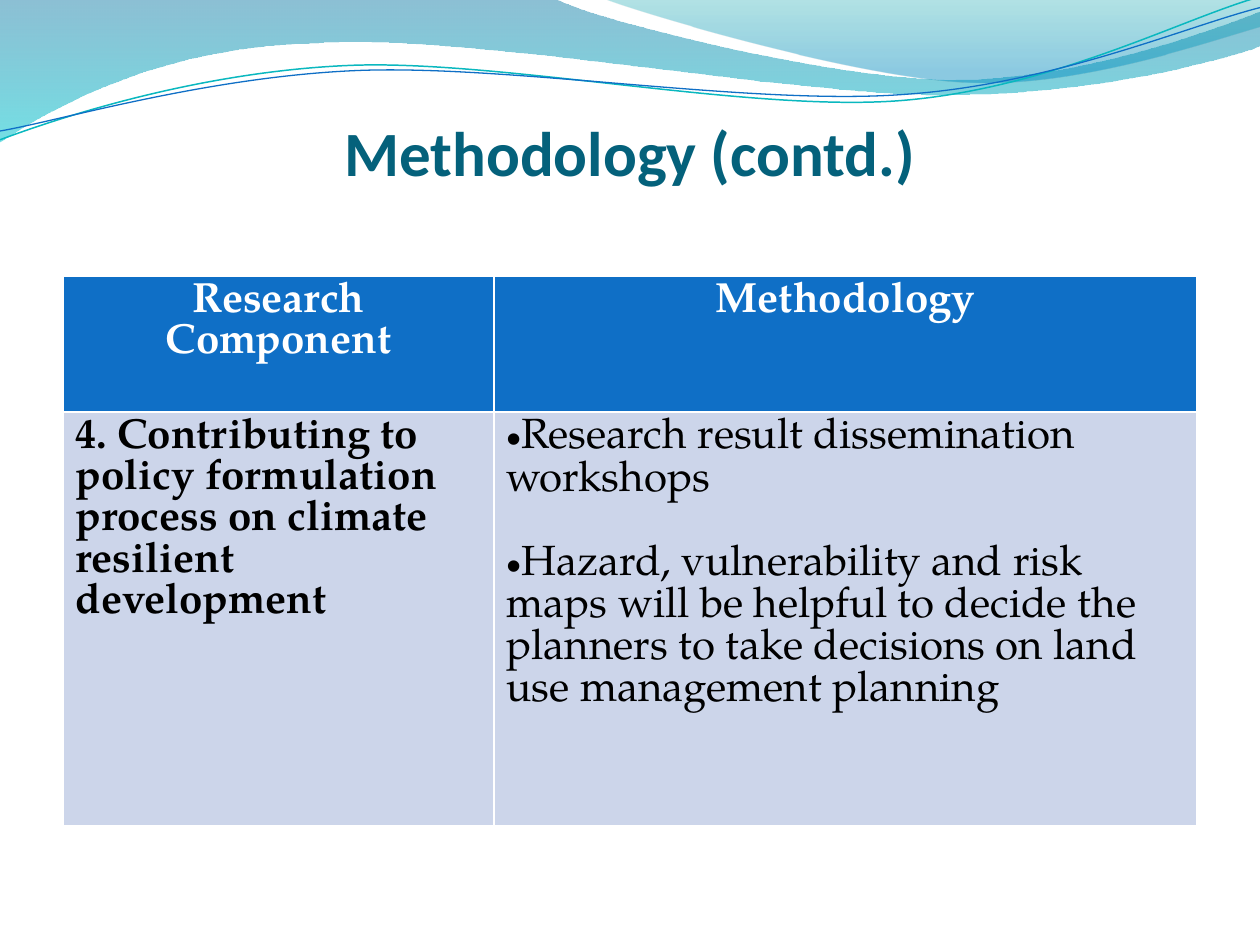
from math import cos, radians, sin

from lxml.etree import SubElement
from pptx import Presentation
from pptx.dml.color import RGBColor
from pptx.enum.text import MSO_ANCHOR, MSO_AUTO_SIZE, PP_ALIGN
from pptx.oxml.ns import qn
from pptx.util import Inches, Pt

COLORS = {
    "title": "04617B", "header": "0F6FC6", "body": "CCD5EA", "white": "FFFFFF", "black": "000000",
    "teal": "0AB8BF", "wave_top": "0074A1", "wave_bottom": "00C6CF",
    "crest_top": "00A1A9", "crest_bottom": "008BBF",
}
WAVE = [
    (0, 0), (4.4, -0.01),
    (4.76, 0.17, 6.64, 0.63, 7.58, 0.63), (8.53, 0.63, 9.58, 0.26, 10, 0.09), (10.01, 0.36),
    (9.83, 0.44, 8.7, 0.76, 7.46, 0.75), (6.22, 0.75, 3.82, 0.28, 2.57, 0.34),
    (1.29, 0.36, 0.46, 0.83, -0.01, 1.13), (0, 0),
]
CREST = [
    (4.79, -0.01), (5.09, 0.11, 6.82, 0.62, 7.69, 0.65),
    (8.56, 0.69, 9.61, 0.32, 10, 0.21), (10, 0), (4.79, -0.01),
]
TEAL_LINE = [
    (0, 1.11), (0.48, 0.93, 1.58, 0.57, 2.77, 0.52),
    (3.95, 0.47, 5.93, 0.89, 7.13, 0.8), (8.33, 0.71, 9.38, 0.15, 9.98, -0.02),
]
BLUE_LINE = [
    (0, 1.04), (0.47, 0.96, 1.64, 0.61, 2.83, 0.56),
    (4.03, 0.51, 5.97, 0.84, 7.17, 0.75), (8.36, 0.67, 9.41, 0.21, 10, 0.06),
]
ROWS = [
    [["Research Component"], ["Methodology"]],
    [["4. Contributing to policy formulation process on climate resilient development"],
     ["Research result dissemination workshops",
      "Hazard, vulnerability and risk maps will be helpful to decide the planners "
      "to take decisions on land use management planning"]],
]


def color(name):
    """Return the named colour."""
    return RGBColor.from_string(COLORS[name])


def local_point(x, y, box, rotation):
    """Express a slide point in the unrotated frame of a box."""
    left, top, width, height = box
    angle = radians(-rotation)
    across, down = x - left - width / 2, y - top - height / 2
    return (Inches(across * cos(angle) - down * sin(angle) + width / 2),
            Inches(across * sin(angle) + down * cos(angle) + height / 2))


class SlideBuilder:
    """Hold the style and the current slide."""

    title_font = "Calibri"
    table_font = "TeX Gyre Pagella"

    def __init__(self, slide):
        self.slide = slide

    def place(self, shape, box):
        """Set the position and size of a shape."""
        shape.left, shape.top, shape.width, shape.height = map(Inches, box)

    def curve(self, box, segments, rotation=0, close=False):
        """Add an outline of straight lines and cubic curves."""
        ends = [(Inches(segment[-2]), Inches(segment[-1])) for segment in segments]
        builder = self.slide.shapes.build_freeform(*ends[0])
        builder.add_line_segments(ends[1:], close=close)
        shape = builder.convert_to_shape()
        shape.shadow.inherit = False
        self.place(shape, box)
        shape.rotation = rotation
        outline = next(shape._element.iter(qn("a:path")))
        outline.set("w", str(shape.width))
        outline.set("h", str(shape.height))
        for command, segment in zip(outline, segments):
            for point in list(command):
                command.remove(point)
            if len(segment) == 6:
                command.tag = qn("a:cubicBezTo")
            for pair in zip(segment[::2], segment[1::2]):
                x, y = local_point(*pair, box, rotation)
                SubElement(command, qn("a:pt"), x=str(x), y=str(y))
        return shape

    def wave(self, box, segments, stops):
        """Add a filled wave with a translucent vertical gradient."""
        shape = self.curve(box, segments, close=True)
        shape.line.fill.background()
        shape.fill.gradient()
        shape.fill.gradient_angle = 270
        for stop, (position, name, _) in zip(shape.fill.gradient_stops, stops):
            stop.position = position
            stop.color.rgb = color(name)
        for element, (_, _, opacity) in zip(shape._element.iter(qn("a:srgbClr")), stops):
            SubElement(element, qn("a:alpha"), val=str(opacity * 1000))

    def line(self, box, segments, name, width):
        """Add an open curved line."""
        shape = self.curve(box, segments, rotation=357.3)
        shape.fill.background()
        shape.line.color.rgb = color(name)
        shape.line.width = Pt(width)

    def style(self, paragraph, font, size, name, bold, alignment):
        """Format a paragraph and its runs."""
        paragraph.alignment = alignment
        for run in paragraph.runs:
            run.font.name = font
            run.font.size = Pt(size)
            run.font.bold = bold
            run.font.color.rgb = color(name)

    def title(self, text):
        """Fill and place the title."""
        shape = self.slide.shapes.title
        self.place(shape, (0.5, 0.77, 9, 0.73))
        frame = shape.text_frame
        frame.text = text
        frame.auto_size = MSO_AUTO_SIZE.NONE
        frame.vertical_anchor = MSO_ANCHOR.BOTTOM
        frame.margin_left = frame.margin_right = frame.margin_bottom = 0
        self.style(frame.paragraphs[0], self.title_font, 36, "title", True, PP_ALIGN.CENTER)

    def table(self, rows, widths, heights):
        """Add the table."""
        table = self.slide.shapes.add_table(
            len(rows), len(widths), Inches(0.5), Inches(2.19),
            Inches(sum(widths)), Inches(sum(heights))).table
        for column, width in zip(table.columns, widths):
            column.width = Inches(width)
        for row, height in zip(table.rows, heights):
            row.height = Inches(height)
        for row_index, row in enumerate(rows):
            for column_index, texts in enumerate(row):
                self.cell(table.cell(row_index, column_index), texts, row_index == 0)

    def cell(self, cell, texts, header):
        """Fill one cell, with bullets when it has several paragraphs."""
        bulleted = len(texts) > 1
        cell.fill.solid()
        cell.fill.fore_color.rgb = color("header" if header else "body")
        cell.text_frame.text = "\n".join(texts)
        for index, paragraph in enumerate(cell.text_frame.paragraphs):
            self.style(paragraph, self.table_font, 24, "white" if header else "black",
                       not bulleted, PP_ALIGN.CENTER if header else PP_ALIGN.LEFT)
            if index:
                paragraph.space_before = Pt(24)
            if bulleted:
                properties = paragraph._p.get_or_add_pPr()
                properties.set("marL", "0")
                properties.set("indent", "0")
                SubElement(properties, qn("a:buFont"), typeface="Arial")
                SubElement(properties, qn("a:buChar"), char="•")


def main():
    """Build and save the slide."""
    presentation = Presentation()
    presentation.slide_width = Inches(10)
    presentation.slide_height = Inches(7.5)
    builder = SlideBuilder(presentation.slides.add_slide(presentation.slide_layouts[5]))
    builder.wave((-0.01, -0.01, 10.02, 1.14), WAVE,
                 [(0, "wave_top", 45), (1, "wave_bottom", 55)])
    builder.wave((4.79, -0.01, 5.21, 0.7), CREST,
                 [(0, "crest_top", 30), (0.8, "crest_bottom", 45)])
    builder.line((-0.02, 0.22, 10.02, 0.71), TEAL_LINE, "teal", 0.85)
    builder.line((-0.02, 0.3, 10.03, 0.58), BLUE_LINE, "header", 0.75)
    builder.title("Methodology (contd.)")
    builder.table(ROWS, (3.42, 5.58), (1.08, 3.28))
    presentation.save("out.pptx")


if __name__ == "__main__":
    main()
